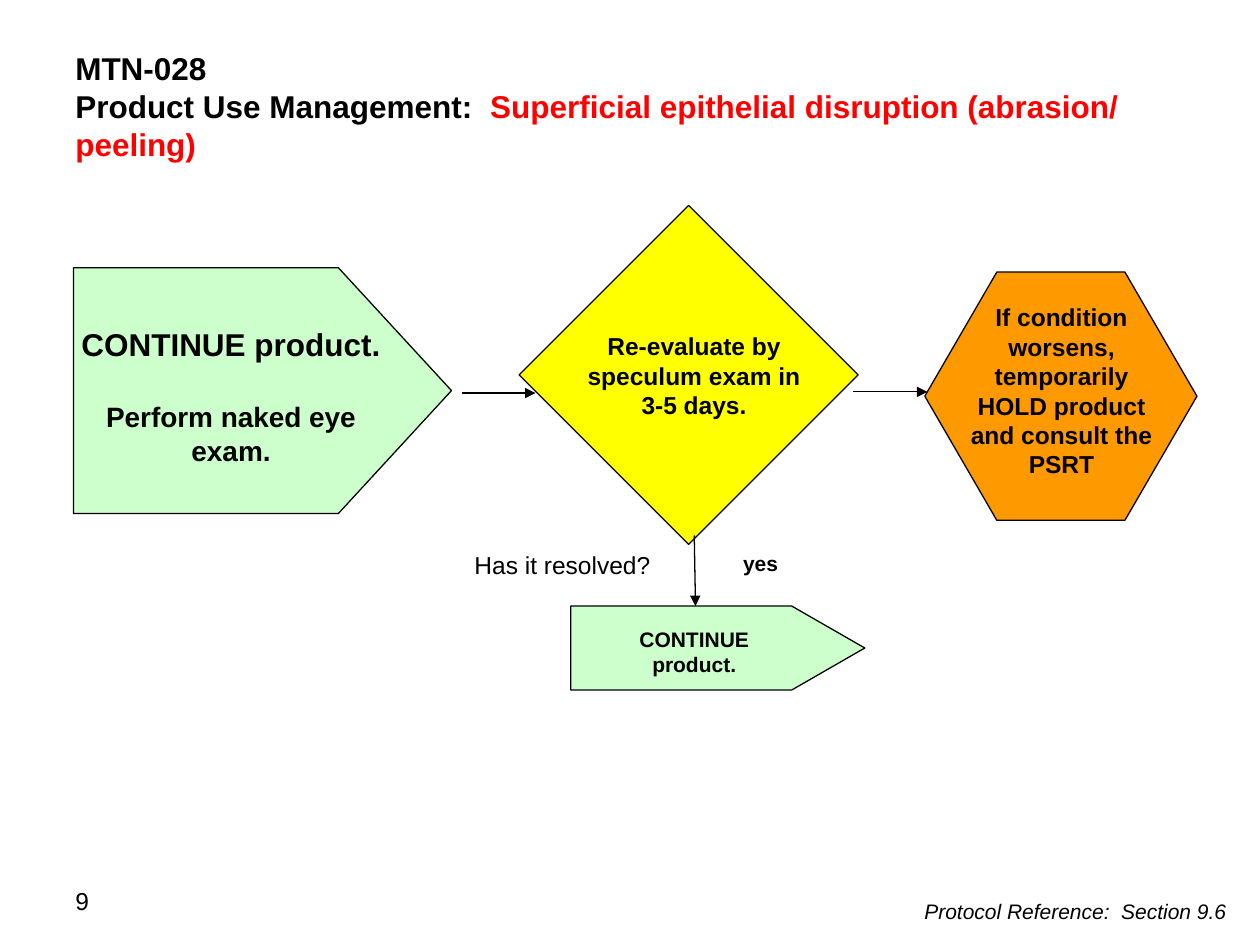
from dataclasses import dataclass

from lxml.etree import SubElement
from pptx import Presentation
from pptx.dml.color import RGBColor as RGB
from pptx.enum.shapes import MSO_CONNECTOR as Connector, MSO_SHAPE as Shape
from pptx.enum.text import MSO_ANCHOR as Anchor, PP_ALIGN as Align
from pptx.oxml.ns import qn
from pptx.util import Inches, Pt

COLUMNS, ROWS = 120, 90
SLIDE_WIDTH, SLIDE_HEIGHT = Inches(10), Inches(7.5)


@dataclass(frozen=True)
class Theme:
    font: str = "Arial"
    ink: RGB = RGB(0, 0, 0)
    alert: RGB = RGB(0xFF, 0, 0)
    go: RGB = RGB(0xCC, 0xFF, 0xCC)
    decide: RGB = RGB(0xFF, 0xFF, 0)
    hold: RGB = RGB(0xFF, 0x99, 0)
    heading: int = 18
    instruction: int = 16
    body: int = 14
    small: int = 12
    outline: float = 0.75


THEME = Theme()


@dataclass(frozen=True)
class Box:
    """An area in columns and rows of the slide grid."""
    left: float
    top: float
    width: float
    height: float

    def area(self, column, row, width, height):
        """Return a box whose corner is counted from this box's corner."""
        return Box(self.left + column, self.top + row, width, height)

    def emu(self):
        across, down = SLIDE_WIDTH / COLUMNS, SLIDE_HEIGHT / ROWS
        return (round(self.left * across), round(self.top * down),
                round(self.width * across), round(self.height * down))


def style(paragraph, size, align, bold=False, italic=False):
    paragraph.alignment = align
    font = paragraph.font
    font.name, font.size = THEME.font, Pt(size)
    font.bold, font.italic = bold, italic
    font.color.rgb = THEME.ink


def add_label(shapes, box, lines, size=THEME.body, align=Align.CENTER,
              bold=True, italic=False, wrap=True):
    """Add a text box with one paragraph for each line; return its frame."""
    frame = shapes.add_textbox(*box.emu()).text_frame
    frame.word_wrap = wrap
    frame.text = "\n".join(lines)
    for paragraph in frame.paragraphs:
        style(paragraph, size, align, bold, italic)
    return frame


def add_step(shapes, kind, box, fill, point=None):
    """Add an outlined flow shape; point sets how deep its tip is."""
    step = shapes.add_shape(kind, *box.emu())
    step.shadow.inherit = False
    step.fill.solid()
    step.fill.fore_color.rgb = fill
    step.line.color.rgb = THEME.ink
    step.line.width = Pt(THEME.outline)
    if point is not None:
        step.adjustments[0] = point


def add_arrow(shapes, box):
    """Add an arrow from the top left to the bottom right of the box."""
    left, top, width, height = box.emu()
    arrow = shapes.add_connector(Connector.STRAIGHT, left, top,
                                 left + width, top + height)
    arrow.line.color.rgb = THEME.ink
    arrow.line.width = Pt(THEME.outline)
    SubElement(arrow.line._get_or_add_ln(), qn("a:tailEnd"), type="triangle")
    SubElement(arrow._element.spPr, qn("a:effectLst"))


def add_title(shapes, box):
    frame = add_label(shapes, box, ["MTN-028", "Product Use Management:  "],
                      THEME.heading, Align.LEFT)
    frame.vertical_anchor = Anchor.MIDDLE
    condition = frame.paragraphs[1].add_run()
    condition.text = "Superficial epithelial disruption (abrasion/ peeling)"
    condition.font.color.rgb = THEME.alert


def add_main_flow(shapes, box):
    add_step(shapes, Shape.PENTAGON, box.area(1, 6, 36, 23.4), THEME.go, 0.46)
    start = add_label(shapes, box.area(0, 10.86, 32, 15),
                      ["CONTINUE product.", "Perform naked eye exam."], THEME.heading)
    exam = start.paragraphs[1]
    exam.font.size = Pt(THEME.instruction)
    exam.space_before = Pt(21)

    add_arrow(shapes, box.area(38, 17.94, 7, 0))
    decision = shapes.add_group_shape().shapes
    add_step(decision, Shape.DIAMOND, box.area(43.44, 0.06, 32.28, 32.28), THEME.decide)
    add_label(decision, box.area(48.36, 11.46, 23.5, 12.5),
              ["Re-evaluate by speculum exam in 3-5 days."])

    add_step(shapes, Shape.HEXAGON, box.area(82.08, 6.42, 25.92, 23.64), THEME.hold, 0.29)
    add_label(shapes, box.area(84.6, 8.7, 21, 18.12),
              ["If condition worsens, temporarily HOLD product and consult the PSRT"])
    add_arrow(shapes, box.area(75.24, 17.82, 7.08, 0))


def add_resolved_branch(shapes, box):
    add_label(shapes, box.area(0, 0.84, 19.32, 4.08), ["Has it resolved?"],
              align=Align.LEFT, bold=False, wrap=False)
    add_arrow(shapes, box.area(22.12, 0, 0.12, 6.72))
    answer = add_label(shapes, box.area(24.52, 0.84, 9, 3.6), ["yes"], THEME.small)
    answer.margin_left = 0
    add_step(shapes, Shape.PENTAGON, box.area(10.36, 6.72, 28, 8), THEME.go, 0.87)
    add_label(shapes, box.area(11.8, 8.04, 20.64, 6.12),
              ["CONTINUE", "product."], THEME.small)


def add_footer(shapes, box):
    add_label(shapes, box.area(0, 0, 28, 6.24), ["9"], align=Align.LEFT, bold=False)
    add_label(shapes, box.area(67, 1.2, 45, 3.6), ["Protocol Reference:  Section 9.6"],
              THEME.small, Align.RIGHT, bold=False, italic=True)


def main():
    deck = Presentation()
    deck.slide_width, deck.slide_height = SLIDE_WIDTH, SLIDE_HEIGHT
    shapes = deck.slides.add_slide(deck.slide_layouts[6]).shapes
    add_title(shapes, Box(6, 4, 108, 12.12))
    add_main_flow(shapes, Box(6, 19.5, 108, 32.4))
    add_resolved_branch(shapes, Box(44, 51, 38.4, 14.72))
    add_footer(shapes, Box(6, 83.76, 112, 6.24))
    deck.save("out.pptx")


if __name__ == "__main__":
    main()
